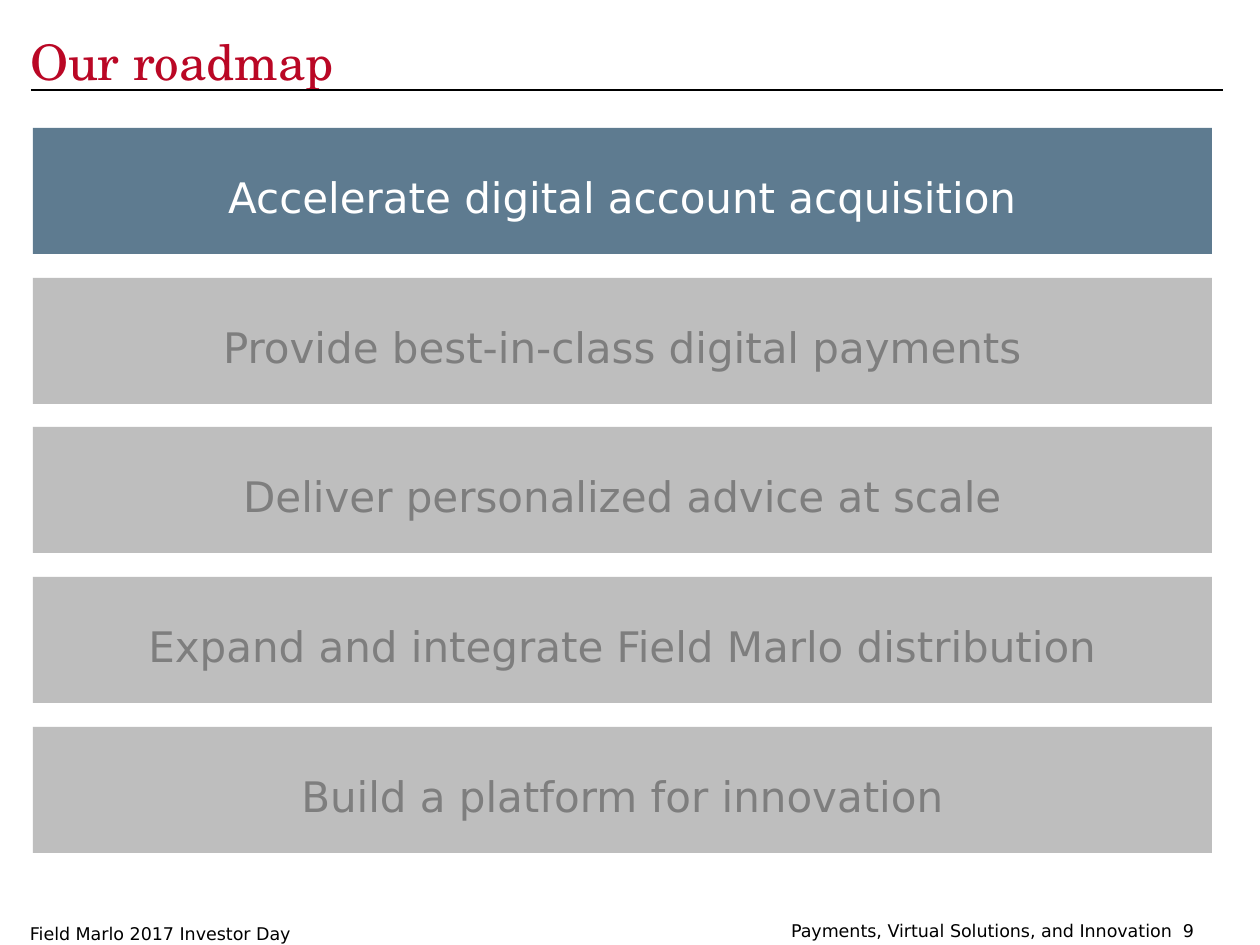
from lxml import etree
from pptx import Presentation
from pptx import util as u
from pptx.dml.color import RGBColor
from pptx.enum import shapes, text
from pptx.oxml.ns import qn

PX = 914400 / 126
COLORS = {
    "title": "BA0725", "rule": "000000", "footer": "000000",
    "active": "5E7B90", "active_text": "FFFFFF",
    "muted": "BEBEBE", "muted_text": "7E7E7E",
}
STEPS = [
    "Accelerate digital account acquisition",
    "Provide best-in-class digital payments",
    "Deliver personalized advice at scale",
    "Expand and integrate Field Marlo distribution",
    "Build a platform for innovation",
]
BAND_TOP, BAND_PITCH = 128, 149.7


def px(n):
    return u.Emu(round(n * PX))


def rgb(name):
    return RGBColor.from_string(COLORS[name])


class Deck:
    serif, sans = "TeX Gyre Schola", "DejaVu Sans"

    def __init__(self, width, height):
        self.prs = Presentation()
        self.prs.slide_width, self.prs.slide_height = px(width), px(height)
        self.s = self.prs.slides.add_slide(self.prs.slide_layouts[5])

    def set_text(self, sp, words, font, size, color, align=text.PP_ALIGN.LEFT,
                 anchor=text.MSO_ANCHOR.TOP, spacing=1.0, top=0):
        """Fill a shape with one styled paragraph; top is its upper inset."""
        tf = sp.text_frame
        tf.word_wrap, tf.auto_size = True, text.MSO_AUTO_SIZE.NONE
        tf.margin_left = tf.margin_right = tf.margin_bottom = 0
        tf.margin_top = px(top)
        tf.vertical_anchor = anchor
        p = tf.paragraphs[0]
        p.text, p.alignment, p.line_spacing = words, align, spacing
        p.font.name, p.font.size = font, u.Pt(size)
        p.font.color.rgb = rgb(color)

    def title(self, words, x, y, w, h):
        sp = self.s.shapes.title
        sp.left, sp.top, sp.width, sp.height = map(px, (x, y, w, h))
        self.set_text(sp, words, self.serif, 28, "title", spacing=1.06)

    def rule(self, x1, x2, y):
        line = self.s.shapes.add_connector(
            shapes.MSO_CONNECTOR.STRAIGHT, px(x1), px(y), px(x2), px(y))
        line.line.color.rgb, line.line.width = rgb("rule"), u.Pt(1.5)
        etree.SubElement(line._element.spPr, qn("a:effectLst"))

    def band(self, words, x, y, w, h, style):
        sp = self.s.shapes.add_shape(
            shapes.MSO_SHAPE.RECTANGLE, *map(px, (x, y, w, h)))
        sp.shadow.inherit = False
        sp.fill.solid()
        sp.fill.fore_color.rgb = rgb(style)
        sp.line.fill.background()
        self.set_text(sp, words, self.sans, 24, style + "_text",
                      text.PP_ALIGN.CENTER, text.MSO_ANCHOR.MIDDLE, top=12)

    def footer(self, words, x, y, w, h):
        sp = self.s.shapes.add_textbox(*map(px, (x, y, w, h)))
        self.set_text(sp, words, self.sans, 10, "footer", spacing=1.14)


def main():
    deck = Deck(1260, 945)
    deck.title("Our roadmap", 30, 28, 400, 53)
    deck.rule(31, 1223, 90)
    for i, step in enumerate(STEPS):
        deck.band(step, 33, round(BAND_TOP + i * BAND_PITCH), 1179, 126,
                  "muted" if i else "active")
    deck.footer("Field Marlo 2017 Investor Day", 30, 920, 280, 21)
    deck.footer("Payments, Virtual Solutions, and Innovation  9", 791, 917, 420, 21)
    deck.prs.save("out.pptx")


if __name__ == "__main__":
    main()
